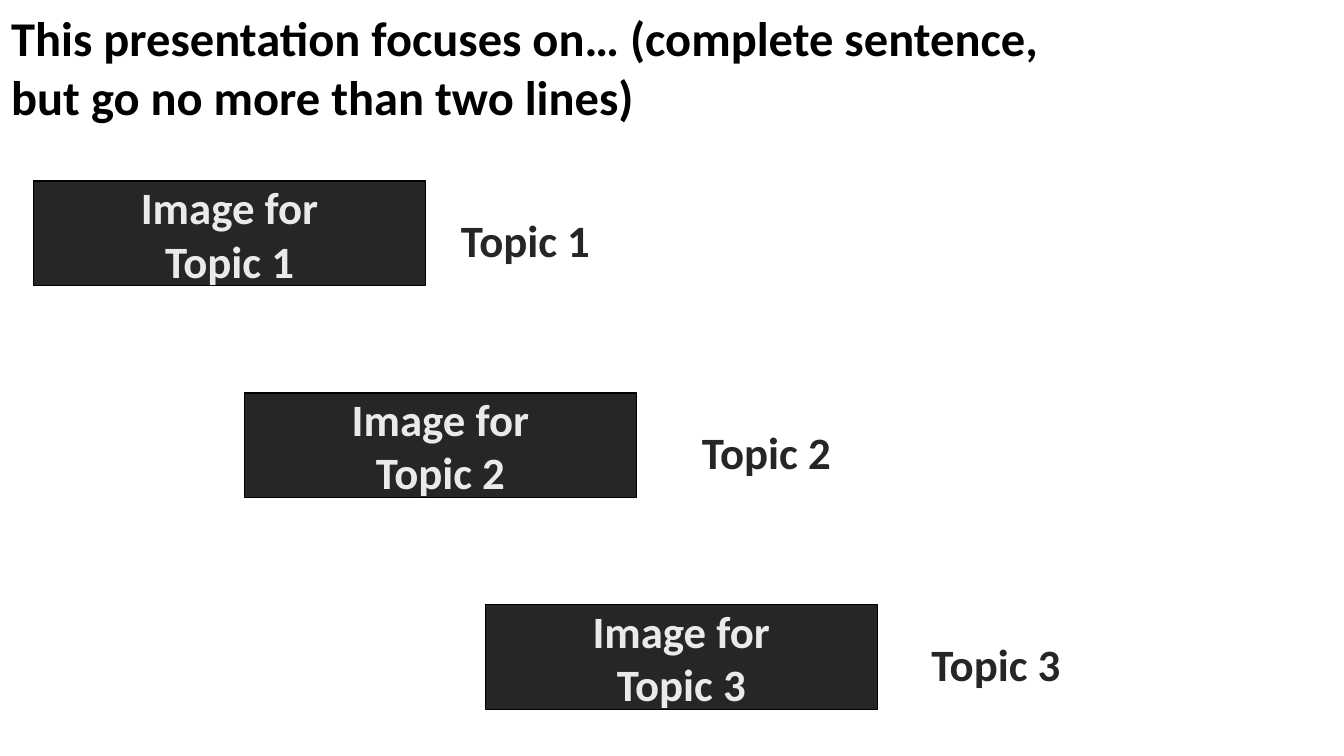
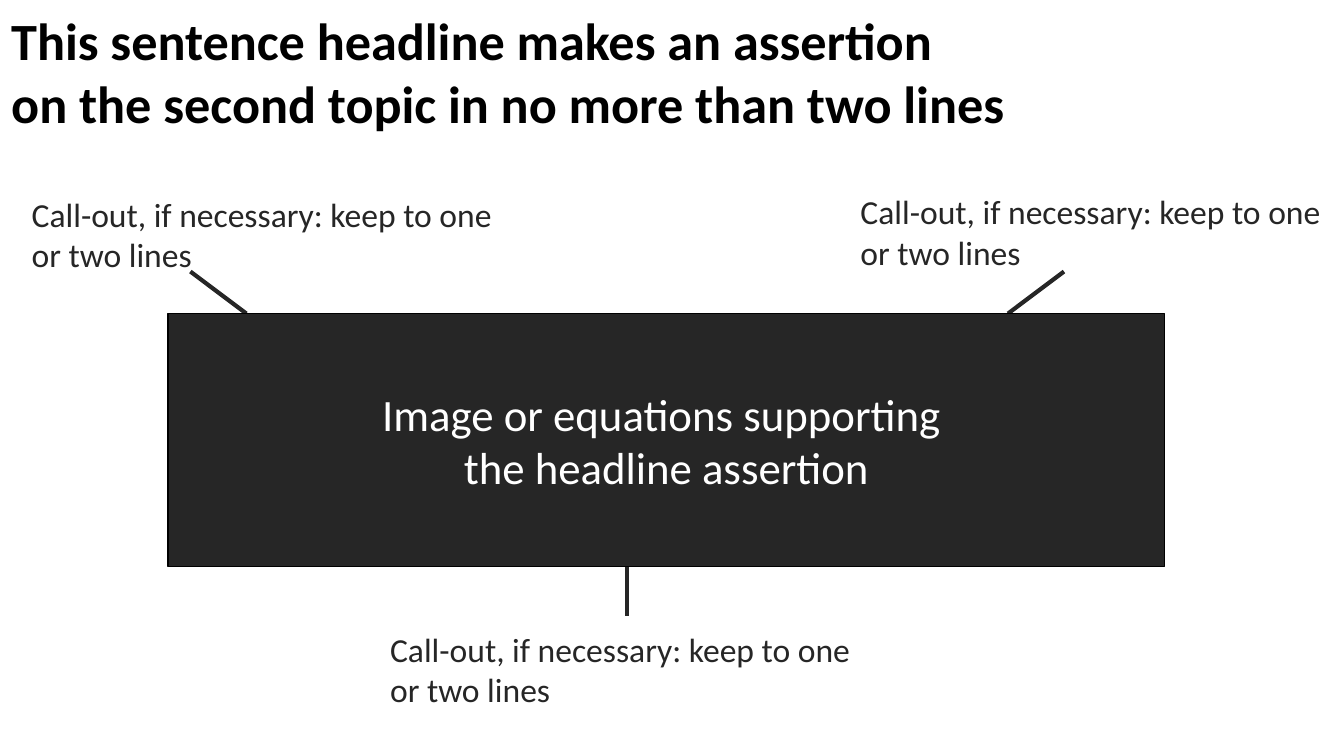
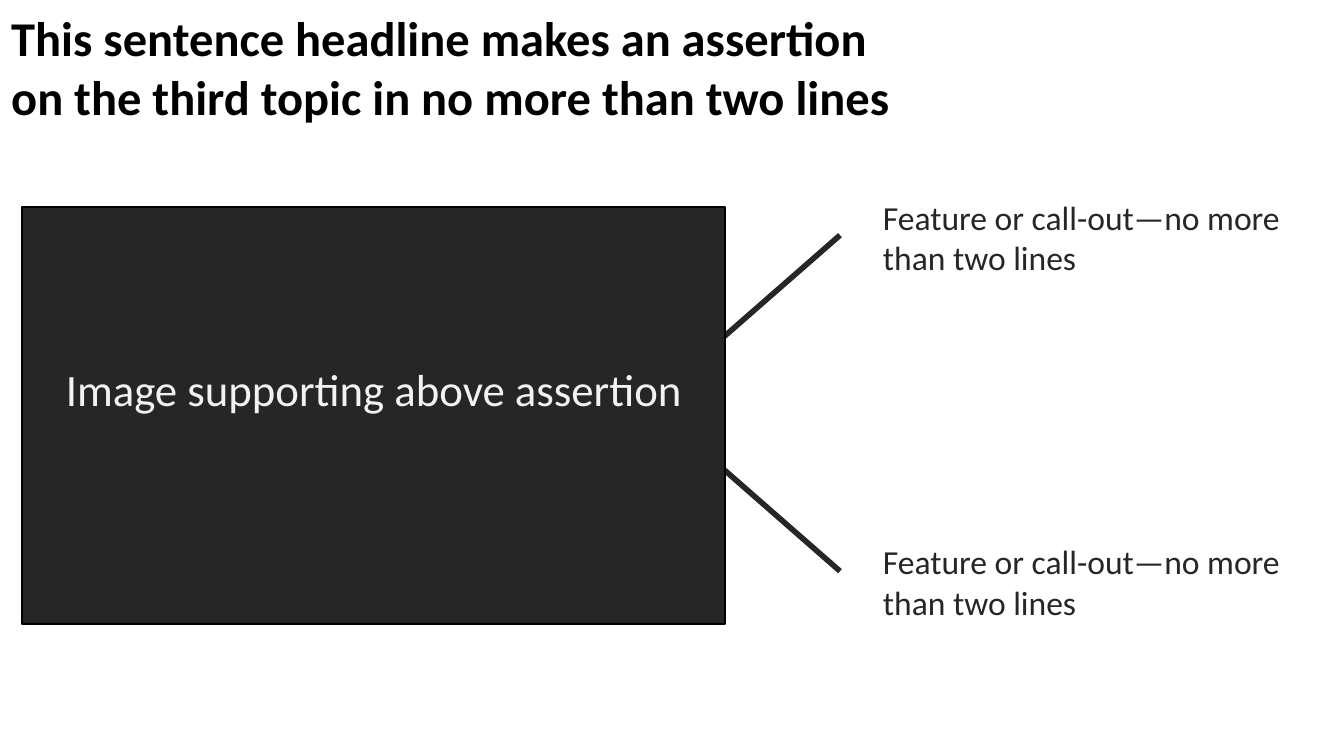
from copy import deepcopy

from pptx import Presentation
from pptx.dml.color import RGBColor
from pptx.enum.shapes import MSO_CONNECTOR, MSO_SHAPE
from pptx.enum.text import MSO_ANCHOR, MSO_AUTO_SIZE, PP_ALIGN
from pptx.oxml.ns import qn
from pptx.oxml.xmlchemy import OxmlElement
from pptx.util import Pt

LEFT, CENTER = PP_ALIGN.LEFT, PP_ALIGN.CENTER
TOP, MIDDLE = MSO_ANCHOR.TOP, MSO_ANCHOR.MIDDLE
NO_AUTOFIT = MSO_AUTO_SIZE.NONE
RECTANGLE = MSO_SHAPE.RECTANGLE
STRAIGHT = MSO_CONNECTOR.STRAIGHT

BLACK = RGBColor(0x00, 0x00, 0x00)
CHARCOAL = RGBColor(0x26, 0x26, 0x26)
SILVER = RGBColor(0xEA, 0xEA, 0xEA)
PALE = RGBColor(0xF2, 0xF2, 0xF2)
WHITE = RGBColor(0xFF, 0xFF, 0xFF)

FONT = "Calibri"
TITLE_ONLY = 5
PANEL_SIZE = 24
CALLOUT_SIZE = 18


def write(frame, words, size, color, bold=False, align=LEFT, anchor=TOP, insets=(5, 2)):
    frame.word_wrap = True
    frame.auto_size = NO_AUTOFIT
    frame.vertical_anchor = anchor
    frame.margin_left = frame.margin_right = Pt(insets[0])
    frame.margin_top = frame.margin_bottom = Pt(insets[1])
    frame.text = words
    for paragraph in frame.paragraphs:
        paragraph.alignment = align
        for run in paragraph.runs:
            run.font.name = FONT
            run.font.size = Pt(size)
            run.font.bold = bold
            run.font.color.rgb = color
        for line_break in paragraph._p.findall(qn("a:br")):
            line_break.append(deepcopy(paragraph.runs[0].font._rPr))


def add_headline_slide(deck, headline, size=26):
    slide = deck.slides.add_slide(deck.slide_layouts[TITLE_ONLY])
    title = slide.shapes.title
    title.left, title.top, title.width, title.height = Pt(6), Pt(4.5), Pt(708), Pt(64)
    write(title.text_frame, headline, size, BLACK, bold=True, insets=(0, 0))
    return slide


def add_panel(slide, left, top, width, height, words, color, bold=False, border=0.75):
    panel = slide.shapes.add_shape(RECTANGLE, Pt(left), Pt(top), Pt(width), Pt(height))
    panel.shadow.inherit = False
    panel.fill.solid()
    panel.fill.fore_color.rgb = CHARCOAL
    panel.line.color.rgb = BLACK
    panel.line.width = Pt(border)
    write(panel.text_frame, words, PANEL_SIZE, color, bold, CENTER, MIDDLE, (7.2, 3.6))
    return panel


def add_label(slide, left, top, width, height, words, size=CALLOUT_SIZE, bold=False):
    label = slide.shapes.add_textbox(Pt(left), Pt(top), Pt(width), Pt(height))
    write(label.text_frame, words, size, CHARCOAL, bold)


def add_pointer(slide, start, end, weight):
    pointer = slide.shapes.add_connector(STRAIGHT, *(Pt(n) for n in (*start, *end)))
    pointer.line.color.rgb = CHARCOAL
    pointer.line.width = Pt(weight)
    pointer._element.spPr.append(OxmlElement("a:effectLst"))


def build_topics(deck):
    slide = add_headline_slide(
        deck,
        "This presentation focuses on… (complete sentence, \vbut go no more than two lines)",
    )
    for index, (panel_left, label_left) in enumerate([(18, 242), (131, 371), (260, 494)]):
        topic = f"Topic {index + 1}"
        panel_top = 97 + 113.5 * index
        add_label(slide, label_left, panel_top + 15, 94, 33, topic, PANEL_SIZE, True)
        add_panel(slide, panel_left, panel_top, 210, 56, f"Image for\n{topic}", SILVER, True)


def build_second_topic(deck):
    slide = add_headline_slide(
        deck,
        "This sentence headline makes an assertion \von the second topic in no more than two lines",
        28,
    )
    pointers = [((336, 294), (336, 330)), ((102, 145.5), (132, 168)), ((570, 145.5), (540, 168))]
    for start, end in pointers:
        add_pointer(slide, start, end, 2.25)
    add_panel(slide, 90, 168, 534, 135.5,
              "Image or equations supporting \vthe headline assertion", WHITE)
    for left, top in [(12, 102), (456, 100.5), (204, 335)]:
        add_label(slide, left, top, 258, 36, "Call-out, if necessary: keep to one or two lines")


def build_third_topic(deck):
    slide = add_headline_slide(
        deck,
        "This sentence headline makes an assertion \von the third topic in no more than two lines",
    )
    for start_y, end_y, feature_top in [(189, 126, 103.5), (243, 306, 288)]:
        add_pointer(slide, (378, start_y), (450, end_y), 3)
        add_label(slide, 468, feature_top, 240, 39, "Feature or call-out—no more than two lines")
    panel = add_panel(slide, 12, 111, 376.5, 223.5,
                      "Image supporting above assertion", PALE, border=1)
    panel.text_frame.margin_bottom = Pt(32.5)


def main():
    deck = Presentation()
    deck.slide_width, deck.slide_height = Pt(720), Pt(405)
    build_topics(deck)
    build_second_topic(deck)
    build_third_topic(deck)
    deck.save("out.pptx")


if __name__ == "__main__":
    main()
